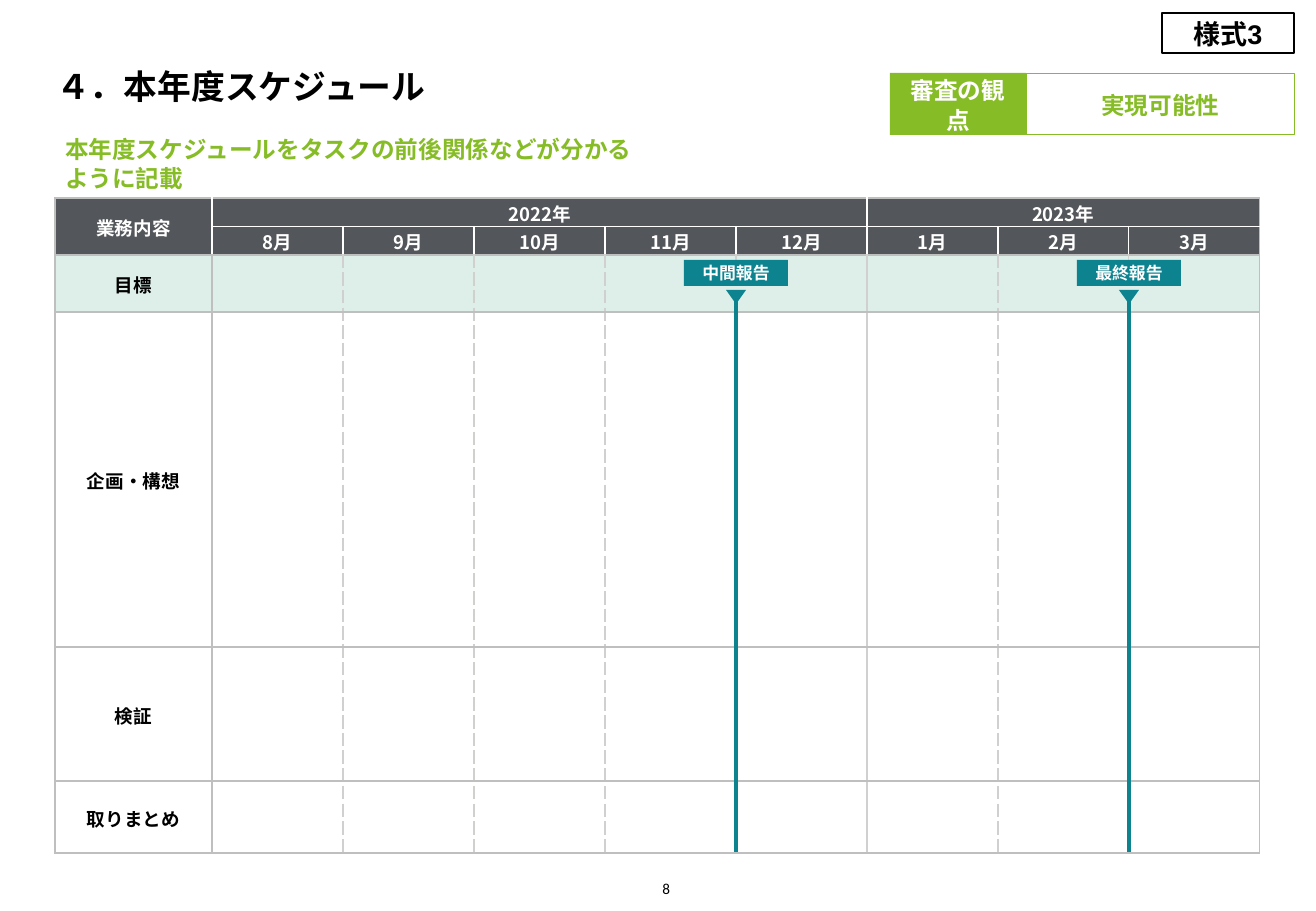
"""Build the fiscal-year schedule slide."""
from lxml.etree import SubElement
from pptx import Presentation
from pptx.dml.color import RGBColor
from pptx.enum.shapes import MSO_CONNECTOR, MSO_SHAPE
from pptx.enum.text import MSO_ANCHOR, PP_ALIGN
from pptx.oxml import parse_xml
from pptx.oxml.ns import nsdecls, qn
from pptx.util import Pt

PX = 7526
CJK = "Noto Sans CJK JP"
COLORS = {"black": "000000", "white": "FFFFFF", "header": "53565A", "goal": "DDEFE8",
          "teal": "0D8390", "green": "86BC25", "grid": "BFBFBF", "month": "D0D0CE"}

TITLE = "４．本年度スケジュール"
GUIDE = "本年度スケジュールをタスクの前後関係などが分かるように記載"
CORNER = "業務内容"
YEARS = [("2022年", 5), ("2023年", 3)]
MONTHS = ["8月", "9月", "10月", "11月", "12月", "1月", "2月", "3月"]
TASKS = [("目標", 57), ("企画・構想", 335), ("検証", 134), ("取りまとめ", 72)]
MILESTONES = [("最終報告", 7), ("中間報告", 4)]
BADGES = [
    ("様式3", (1162, 13, 132, 40), "white", "black", 1.5, 16, "black"),
    ("実現可能性", (1026, 73, 269, 62), "white", "green", 0.5, 14, "green"),
    ("審査の観点", (890, 73, 136, 62), "green", "green", 0.5, 14, "white"),
]
PAGE = "8"

LEFT, TOP, TASK_W, MONTH_W, HEADER_H = 55, 198, 157, 131, 28
HEADER_ROWS = 2
YEAR_END = 1 + YEARS[0][1]


def rgb(name):
    return RGBColor.from_string(COLORS[name])


def emu(*lengths):
    return [n * PX for n in lengths]


def write(tf, text, size, color, font, bold=True, align=PP_ALIGN.CENTER, spacing=None):
    p = tf.paragraphs[0]
    p.alignment = align
    if spacing:
        p.line_spacing = spacing
    r = p.add_run()
    r.text = text
    r.font.size, r.font.bold, r.font.name = Pt(size), bold, font
    r.font.color.rgb = rgb(color)
    SubElement(r._r.get_or_add_rPr(), qn("a:ea"), typeface=CJK)


def frame(tf, anchor, wrap, insets):
    tf.vertical_anchor, tf.word_wrap = anchor, wrap
    tf.margin_left, tf.margin_top, tf.margin_right, tf.margin_bottom = emu(*insets)


def add_box(s, kind, box, fill, line=None, width=0):
    sp = s.shapes.add_shape(kind, *emu(*box))
    sp.shadow.inherit = False
    sp.fill.solid()
    sp.fill.fore_color.rgb = rgb(fill)
    if line:
        sp.line.color.rgb = rgb(line)
        sp.line.width = Pt(width)
    else:
        sp.line.fill.background()
    return sp


def add_text(s, box, text, size, color, anchor, align, bold, left=0):
    sp = s.shapes.add_textbox(*emu(*box))
    frame(sp.text_frame, anchor, False, (left, 0, 0, 0))
    write(sp.text_frame, text, size, color, "Calibri", bold, align)


def vertical_edge(row, edge):
    if edge in (0, len(MONTHS) + 1):
        return "grid", "solid"
    if row < HEADER_ROWS:
        return "white", "solid"
    if edge == 1:
        return "grid", "solid"
    return "month", "solid" if edge == YEAR_END else "sysDash"


def horizontal_edge(edge, col):
    return ("white" if edge == 1 and col else "grid"), "solid"


def style_cell(cell, row, col):
    cell.fill.solid()
    cell.fill.fore_color.rgb = rgb("header" if row < HEADER_ROWS else
                                   "goal" if row == HEADER_ROWS else "white")
    cell.vertical_anchor = MSO_ANCHOR.MIDDLE
    cell.margin_left = cell.margin_right = 5 * PX
    cell.margin_top = cell.margin_bottom = 0
    bottom = row + (cell.span_height if cell.is_merge_origin else 1)
    right = col + (cell.span_width if cell.is_merge_origin else 1)
    edges = [("lnL", vertical_edge(row, col)), ("lnR", vertical_edge(row, right)),
             ("lnT", horizontal_edge(row, col)), ("lnB", horizontal_edge(bottom, col))]
    for i, (tag, (color, dash)) in enumerate(edges):
        cell._tc.get_or_add_tcPr().insert(i, parse_xml(
            f'<a:{tag} {nsdecls("a")} w="{Pt(1)}"><a:solidFill><a:srgbClr val="{COLORS[color]}"/>'
            f'</a:solidFill><a:prstDash val="{dash}"/></a:{tag}>'))


def add_schedule(s):
    widths = [TASK_W] + [MONTH_W] * len(MONTHS)
    heights = [HEADER_H] * HEADER_ROWS + [h for _, h in TASKS]
    box = emu(LEFT, TOP, sum(widths), sum(heights))
    table = s.shapes.add_table(len(heights), len(widths), *box).table
    table.first_row = table.horz_banding = False
    for col, w in zip(table.columns, widths):
        col.width = w * PX
    for row, h in zip(table.rows, heights):
        row.height = h * PX
    labels = {(0, 0): CORNER}
    table.cell(0, 0).merge(table.cell(1, 0))
    start = 1
    for year, span in YEARS:
        table.cell(0, start).merge(table.cell(0, start + span - 1))
        labels[0, start] = year
        start += span
    labels.update({(1, c): month for c, month in enumerate(MONTHS, 1)})
    labels.update({(r, 0): task for r, (task, _) in enumerate(TASKS, HEADER_ROWS)})
    for r in range(len(heights)):
        for c in range(len(widths)):
            cell = table.cell(r, c)
            if cell.is_spanned:
                continue
            style_cell(cell, r, c)
            if (r, c) in labels:
                color = "white" if r < HEADER_ROWS else "black"
                write(cell.text_frame, labels[r, c], 11, color, CJK, spacing=1.06)
    return TOP + sum(heights)


def add_milestone(s, text, month, bottom):
    x = LEFT + TASK_W + month * MONTH_W
    line = s.shapes.add_connector(MSO_CONNECTOR.STRAIGHT, *emu(x, 293, x, bottom))
    line.line.color.rgb = rgb("teal")
    line.line.width = Pt(2.25)
    SubElement(line._element.spPr, qn("a:effectLst"))
    add_box(s, MSO_SHAPE.ISOSCELES_TRIANGLE, (x - 10, 290, 20, 14), "teal").rotation = 180
    sp = add_box(s, MSO_SHAPE.RECTANGLE, (x - 52, 260, 104, 26), "teal")
    frame(sp.text_frame, MSO_ANCHOR.MIDDLE, False, (5, 5, 5, 5))
    write(sp.text_frame, text, 10, "white", CJK)


def main():
    prs = Presentation()
    prs.slide_width, prs.slide_height = emu(1316, 911)
    s = prs.slides.add_slide(prs.slide_layouts[5])

    title = s.shapes.title
    title.left, title.top, title.width, title.height = emu(56, 24, 1205, 82)
    frame(title.text_frame, MSO_ANCHOR.BOTTOM, True, (0, 0, 0, 0))
    write(title.text_frame, TITLE, 20, "black", "Calibri", align=PP_ALIGN.LEFT)

    bottom = add_schedule(s)
    for text, month in MILESTONES:
        add_milestone(s, text, month, bottom)
    add_text(s, (56, 135, 578, 57), GUIDE, 14, "green", MSO_ANCHOR.MIDDLE,
             PP_ALIGN.LEFT, True, 9)
    for text, box, fill, line, width, size, color in BADGES:
        sp = add_box(s, MSO_SHAPE.RECTANGLE, box, fill, line, width)
        frame(sp.text_frame, MSO_ANCHOR.MIDDLE, True, (10, 10, 10, 10))
        write(sp.text_frame, text, size, color, "Arial", spacing=1.06)
    add_text(s, (646, 875, 24, 23), PAGE, 9, "black", MSO_ANCHOR.BOTTOM,
             PP_ALIGN.RIGHT, False)
    prs.save("out.pptx")


if __name__ == "__main__":
    main()
